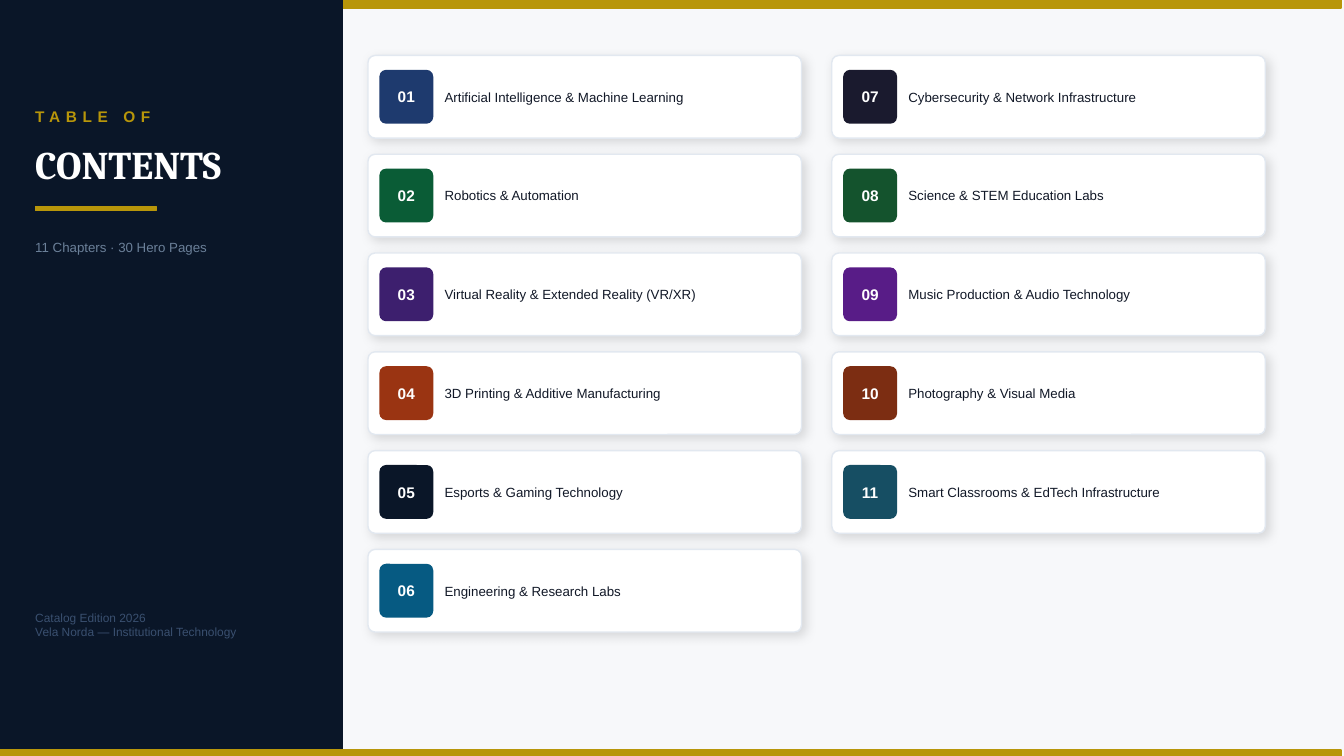
from lxml.etree import SubElement
from pptx import Presentation
from pptx.dml.color import RGBColor
from pptx.enum.shapes import MSO_SHAPE
from pptx.enum.text import MSO_ANCHOR, PP_ALIGN
from pptx.oxml.ns import qn
from pptx.util import Inches, Pt

THEME = {
    "page": "F7F8FA", "navy": "0A1628", "gold": "B8960A", "white": "FFFFFF",
    "border": "E2E8F0", "ink": "111827", "muted": "6B8099", "faint": "3A5070",
    "shadow": "000000",
    "kicker": {"name": "Arial", "size": Pt(11), "bold": True},
    "title": {"name": "Cambria", "size": Pt(28), "bold": True},
    "body": {"name": "Arial", "size": Pt(9.5)},
    "small": {"name": "Arial", "size": Pt(8.5)},
}
FRAME = {"margin_left": 0, "margin_top": 0, "margin_right": 0, "margin_bottom": 0,
         "word_wrap": True, "vertical_anchor": MSO_ANCHOR.MIDDLE}
CHAPTERS = [
    ("Artificial Intelligence & Machine Learning", "1E3A6E"),
    ("Robotics & Automation", "0A5C36"),
    ("Virtual Reality & Extended Reality (VR/XR)", "3D1F6E"),
    ("3D Printing & Additive Manufacturing", "9A3412"),
    ("Esports & Gaming Technology", "0A1628"),
    ("Engineering & Research Labs", "065A82"),
    ("Cybersecurity & Network Infrastructure", "1A1A2E"),
    ("Science & STEM Education Labs", "14532D"),
    ("Music Production & Audio Technology", "581C87"),
    ("Photography & Visual Media", "7C2D12"),
    ("Smart Classrooms & EdTech Infrastructure", "164E63"),
]
ROWS = 6

prs = Presentation()
prs.slide_width, prs.slide_height = Inches(13.33), Inches(7.5)
s = prs.slides.add_slide(prs.slide_layouts[6])
s.background.fill.solid()
s.background.fill.fore_color.rgb = RGBColor.from_string(THEME["page"])


def add_box(box, fill, line=None, radius=None):
    kind = MSO_SHAPE.ROUNDED_RECTANGLE if radius else MSO_SHAPE.RECTANGLE
    sp = s.shapes.add_shape(kind, *map(Inches, box))
    sp.shadow.inherit = False
    if radius:
        sp.adjustments[0] = radius
    sp.fill.solid()
    sp.fill.fore_color.rgb = RGBColor.from_string(fill)
    sp.line.color.rgb = RGBColor.from_string(line or fill)
    sp.line.width = Pt(1)
    return sp


def write(sp, lines, font, color, align=PP_ALIGN.LEFT, spacing=None):
    tf = sp.text_frame
    for key, value in FRAME.items():
        setattr(tf, key, value)
    for i, line in enumerate(lines):
        p = tf.paragraphs[0] if i == 0 else tf.add_paragraph()
        p.alignment = align
        r = p.add_run()
        r.text = line
        for key, value in THEME[font].items():
            setattr(r.font, key, value)
        r.font.color.rgb = RGBColor.from_string(THEME[color])
        if spacing:
            r._r.get_or_add_rPr().set("spc", str(spacing * 100))


add_box((0, 0, 13.3, 0.08), THEME["gold"])
add_box((0, 0, 3.4, 7.5), THEME["navy"])
add_box((0.35, 2.05, 1.2, 0.04), THEME["gold"])
add_box((0, 7.44, 13.3, 0.06), THEME["gold"])

for top, width, height, lines, font, color, spacing in [
    (0.9, 3, 0.5, ["TABLE OF"], "kicker", "gold", 4),
    (1.35, 3, 0.55, ["CONTENTS"], "title", "white", None),
    (2.3, 2.8, 0.3, ["11 Chapters · 30 Hero Pages"], "body", "muted", None),
    (5.8, 2.8, 0.8, ["Catalog Edition 2026", "Vela Norda — Institutional Technology"],
     "small", "faint", None),
]:
    tb = s.shapes.add_textbox(Inches(0.35), Inches(top), Inches(width), Inches(height))
    write(tb, lines, font, color, spacing=spacing)

for i, (name, color) in enumerate(CHAPTERS):
    col, row = divmod(i, ROWS)
    x, y = 3.65 + col * 4.6, 0.55 + row * 0.98

    card = add_box((x, y, 4.3, 0.82), THEME["white"], THEME["border"], 0.085)
    effects = card._element.spPr.find(qn("a:effectLst"))
    shadow = SubElement(effects, qn("a:outerShdw"), blurRad=str(Pt(8)), dist=str(Pt(3)),
                        dir=str(45 * 60000), algn="bl", rotWithShape="0")
    tint = SubElement(shadow, qn("a:srgbClr"), val=THEME["shadow"])
    SubElement(tint, qn("a:alpha"), val="12000")

    badge = add_box((x + 0.12, y + 0.15, 0.52, 0.52), color, radius=0.115)
    write(badge, [f"{i + 1:02}"], "kicker", "white", PP_ALIGN.CENTER)

    label = s.shapes.add_textbox(Inches(x + 0.76), Inches(y + 0.12), Inches(3.4), Inches(0.58))
    write(label, [name], "body", "ink")

prs.save("out.pptx")
